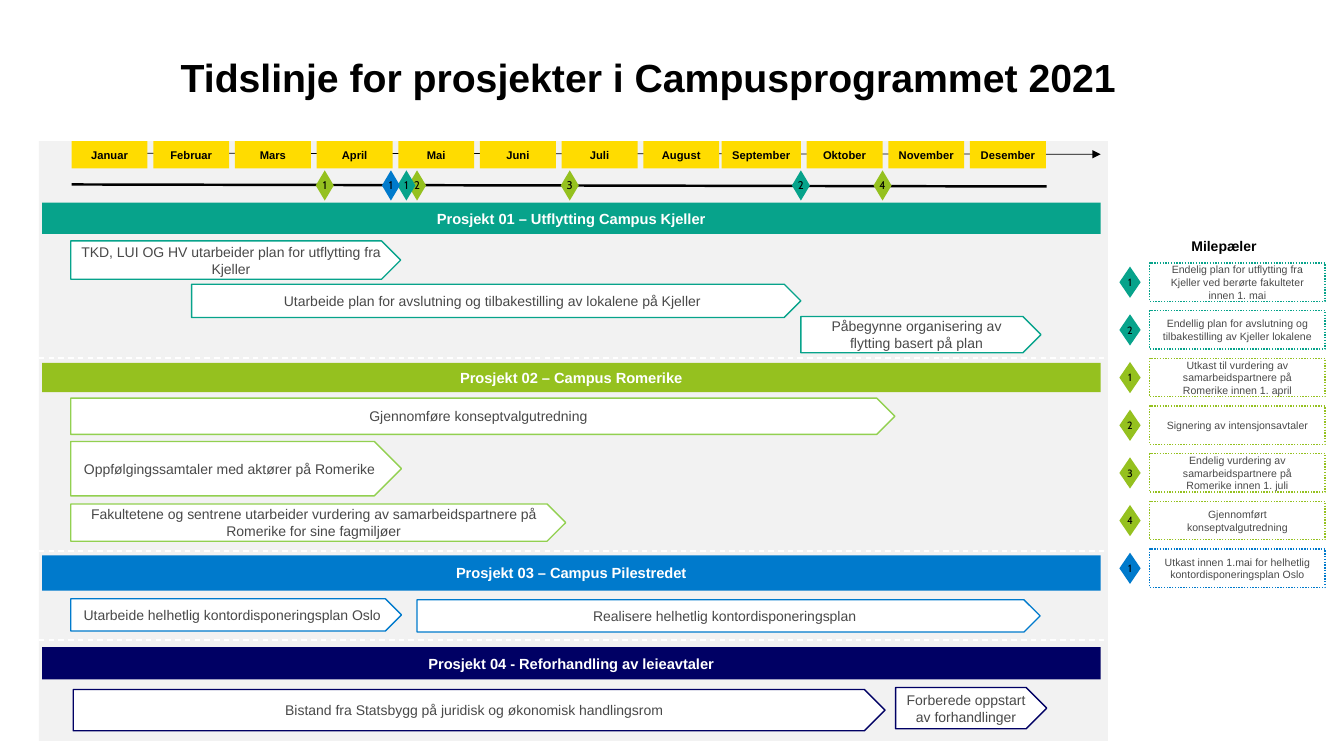
"""Build the 2021 campus programme timeline on a grid of month columns and tenth-inch rows."""
from dataclasses import dataclass

import lxml.etree
import pptx
import pptx.dml.color
import pptx.enum.dml
import pptx.enum.shapes
import pptx.enum.text
import pptx.oxml.ns
import pptx.shapes.autoshape
import pptx.shapes.connector
import pptx.slide
import pptx.text.text
import pptx.util

Preset = pptx.enum.shapes.MSO_SHAPE
Dash = pptx.enum.dml.MSO_LINE
Anchor = pptx.enum.text.MSO_ANCHOR


@dataclass(frozen=True)
class Theme:
    teal: str = "07A38B"
    green: str = "95C11F"
    light_green: str = "92D050"
    blue: str = "007ACC"
    navy: str = "000064"
    yellow: str = "FFDC00"
    panel: str = "F2F2F2"
    white: str = "FFFFFF"
    black: str = "000000"
    grey: str = "494949"
    sans: str = "Arial"
    numeral: str = "Cabin"
    title: float = 28
    banner: float = 10.5
    body: float = 10
    month: float = 8
    legend: float = 7.5


THEME = Theme()
JANUARY, MONTH_PITCH, ROW = 0.71, 0.81, 0.1


@dataclass(frozen=True)
class Area:
    column: float
    row: float
    columns: float
    rows: float

    def box(self) -> tuple[int, int, int, int]:
        return (across(self.column), down(self.row),
                pptx.util.Inches(self.columns * MONTH_PITCH), down(self.rows))


@dataclass(frozen=True)
class Type:
    size: float
    color: str
    bold: bool = False
    font: str = THEME.sans


@dataclass(frozen=True)
class Activity:
    label: str
    area: Area


@dataclass(frozen=True)
class Project:
    name: str
    row: float
    rows: float
    color: str
    outline: str
    activities: tuple[Activity, ...]


@dataclass(frozen=True)
class Milestone:
    number: str
    month: float
    color: str
    label: str


MONTHS = ("Januar", "Februar", "Mars", "April", "Mai", "Juni", "Juli", "August",
          "September", "Oktober", "November", "Desember")

PROJECTS = (
    Project("Prosjekt 01 – Utflytting Campus Kjeller", 20.1, 3.1, THEME.teal, THEME.teal, (
        Activity("TKD, LUI OG HV utarbeider plan for utflytting fra Kjeller",
                 Area(-0.01, 23.9, 4.04, 3.8)),
        Activity("Utarbeide plan for avslutning og tilbakestilling av lokalene på Kjeller",
                 Area(1.47, 28.2, 7.46, 3.3)),
        Activity("Påbegynne organisering av flytting basert på plan",
                 Area(8.93, 31.4, 2.94, 3.6)))),
    Project("Prosjekt 02 – Campus Romerike", 36, 2.9, THEME.green, THEME.light_green, (
        Activity("Gjennomføre konseptvalgutredning", Area(-0.01, 39.5, 10.09, 3.6)),
        Activity("Oppfølgingssamtaler med aktører på Romerike", Area(-0.01, 43.8, 4.05, 5.4)),
        Activity("Fakultetene og sentrene utarbeider vurdering av samarbeidspartnere på "
                 "Romerike for sine fagmiljøer", Area(-0.01, 50, 6.06, 3.7)))),
    Project("Prosjekt 03 – Campus Pilestredet", 55.1, 3.5, THEME.blue, THEME.blue, (
        Activity("Utarbeide helhetlig kontordisponeringsplan Oslo", Area(-0.01, 59.4, 4.05, 3.2)),
        Activity("Realisere helhetlig kontordisponeringsplan", Area(4.23, 59.5, 7.63, 3.2)))),
    Project("Prosjekt 04 - Reforhandling av leieavtaler", 64.2, 3.2, THEME.navy, THEME.navy, (
        Activity("Bistand fra Statsbygg på juridisk og økonomisk handlingsrom",
                 Area(0.02, 68.4, 9.94, 4.1)),
        Activity("Forberede oppstart av forhandlinger", Area(10.09, 68.2, 1.85, 4.1)))),
)

MILESTONES = (
    Milestone("1", 4.1, THEME.teal,
              "Endelig plan for utflytting fra Kjeller ved berørte fakulteter innen 1. mai"),
    Milestone("2", 8.93, THEME.teal,
              "Endellig plan for avslutning og tilbakestilling av Kjeller lokalene"),
    Milestone("1", 3.1, THEME.green,
              "Utkast til vurdering av samarbeidspartnere på Romerike innen 1. april"),
    Milestone("2", 4.23, THEME.green, "Signering av intensjonsavtaler"),
    Milestone("3", 6.1, THEME.green,
              "Endelig vurdering av samarbeidspartnere på Romerike innen 1. juli"),
    Milestone("4", 9.93, THEME.green, "Gjennomført konseptvalgutredning"),
    Milestone("1", 3.91, THEME.blue,
              "Utkast innen 1.mai for helhetlig kontordisponeringsplan Oslo"),
)


def across(column: float) -> int:
    return pptx.util.Inches(JANUARY + column * MONTH_PITCH)


def down(row: float) -> int:
    return pptx.util.Inches(row * ROW)


def rgb(color: str) -> pptx.dml.color.RGBColor:
    return pptx.dml.color.RGBColor.from_string(color)


def write(frame: pptx.text.text.TextFrame, words: str, style: Type, wrap: bool = True) -> None:
    frame.text = words
    frame.word_wrap = wrap
    line = frame.paragraphs[0]
    line.alignment = pptx.enum.text.PP_ALIGN.CENTER
    font = line.runs[0].font
    font.size, font.bold, font.name = pptx.util.Pt(style.size), style.bold, style.font
    font.color.rgb = rgb(style.color)


def draw(slide: pptx.slide.Slide, preset: Preset, area: Area, fill: str | None = None,
         outline: str | None = None) -> pptx.shapes.autoshape.Shape:
    figure = slide.shapes.add_shape(preset, *area.box())
    figure.shadow.inherit = False
    for paint, color in ((figure.fill, fill), (figure.line.fill, outline)):
        if color is None:
            paint.background()
        else:
            paint.solid()
            paint.fore_color.rgb = rgb(color)
    if outline:
        figure.line.width = pptx.util.Pt(1)
    figure.text_frame.vertical_anchor = Anchor.MIDDLE
    return figure


def set_insets(frame: pptx.text.text.TextFrame, inches: float) -> None:
    frame.margin_left = frame.margin_right = pptx.util.Inches(inches)
    frame.margin_top = frame.margin_bottom = pptx.util.Inches(inches)


def rule(slide: pptx.slide.Slide, start: tuple[float, float], end: tuple[float, float],
         color: str, width: float) -> pptx.shapes.connector.Connector:
    stroke = slide.shapes.add_connector(pptx.enum.shapes.MSO_CONNECTOR.STRAIGHT, across(start[0]),
                                        down(start[1]), across(end[0]), down(end[1]))
    stroke.line.color.rgb = rgb(color)
    stroke.line.width = pptx.util.Pt(width)
    lxml.etree.SubElement(stroke._element.spPr, pptx.oxml.ns.qn("a:effectLst"))
    return stroke


def draw_marker(slide: pptx.slide.Slide, milestone: Milestone, area: Area, size: float) -> None:
    marker = draw(slide, Preset.DIAMOND, area, milestone.color)
    set_insets(marker.text_frame, 0)
    write(marker.text_frame, milestone.number, Type(size, THEME.black, font=THEME.numeral), False)


def draw_calendar(slide: pptx.slide.Slide) -> None:
    arrow = rule(slide, (0.42, 15.2), (12.6, 15.3), THEME.black, 0.5)
    lxml.etree.SubElement(arrow.line._get_or_add_ln(), pptx.oxml.ns.qn("a:tailEnd"), type="triangle")
    rule(slide, (0, 18.3), (11.94, 18.5), THEME.black, 1.75)
    for index, name in enumerate(MONTHS):
        extra = 0.04 if name == "September" else 0
        month = draw(slide, Preset.RECTANGLE, Area(index - extra, 14, 0.93 + extra, 2.7), THEME.yellow)
        set_insets(month.text_frame, 0)
        write(month.text_frame, name, Type(THEME.month, THEME.black, True))
    for milestone in sorted(MILESTONES, key=lambda each: -each.month):
        draw_marker(slide, milestone, Area(milestone.month - 0.11, 16.9, 0.22, 3), THEME.month)


def draw_project(slide: pptx.slide.Slide, project: Project) -> None:
    banner = draw(slide, Preset.RECTANGLE, Area(-0.36, project.row, 12.96, project.rows), project.color)
    set_insets(banner.text_frame, 0.03)
    write(banner.text_frame, project.name, Type(THEME.banner, THEME.white, True))
    for activity in project.activities:
        bar = draw(slide, Preset.PENTAGON, activity.area, THEME.white, project.outline)
        write(bar.text_frame, activity.label, Type(THEME.body, THEME.grey))


def draw_legend(slide: pptx.slide.Slide) -> None:
    heading = slide.shapes.add_textbox(*Area(12.83, 23.1, 2.56, 2.2).box())
    write(heading.text_frame, "Milepæler", Type(THEME.body, THEME.black, True))
    for index, milestone in enumerate(MILESTONES):
        row = 26.1 + index * 4.73
        draw_marker(slide, milestone, Area(12.83, row + 0.35, 0.26, 3.1), THEME.legend)
        note = draw(slide, Preset.RECTANGLE, Area(13.2, row, 2.15, 3.8), outline=milestone.color)
        note.line.dash_style = Dash.ROUND_DOT
        write(note.text_frame, milestone.label, Type(THEME.legend, THEME.grey))


def main() -> None:
    deck = pptx.Presentation()
    deck.slide_width, deck.slide_height = pptx.util.Inches(13.33), pptx.util.Inches(7.5)
    slide = deck.slides.add_slide(deck.slide_layouts[5])
    heading = slide.shapes.title
    heading.left, heading.top, heading.width, heading.height = Area(1, 5.3, 12.12, 9.1).box()
    write(heading.text_frame, "Tidslinje for prosjekter i Campusprogrammet 2021",
          Type(THEME.title, THEME.black, True))
    heading.text_frame.vertical_anchor = Anchor.TOP
    heading.text_frame.paragraphs[0].line_spacing = 0.9
    draw(slide, Preset.RECTANGLE, Area(-0.4, 14, 13.09, 59.5), THEME.panel)
    draw_calendar(slide)
    for project in PROJECTS:
        draw_project(slide, project)
    for row in (35.5, 54.65, 63.5):
        rule(slide, (-0.4, row), (12.69, row), THEME.white, 1).line.dash_style = Dash.DASH
    draw_legend(slide)
    deck.save("out.pptx")


if __name__ == "__main__":
    main()
